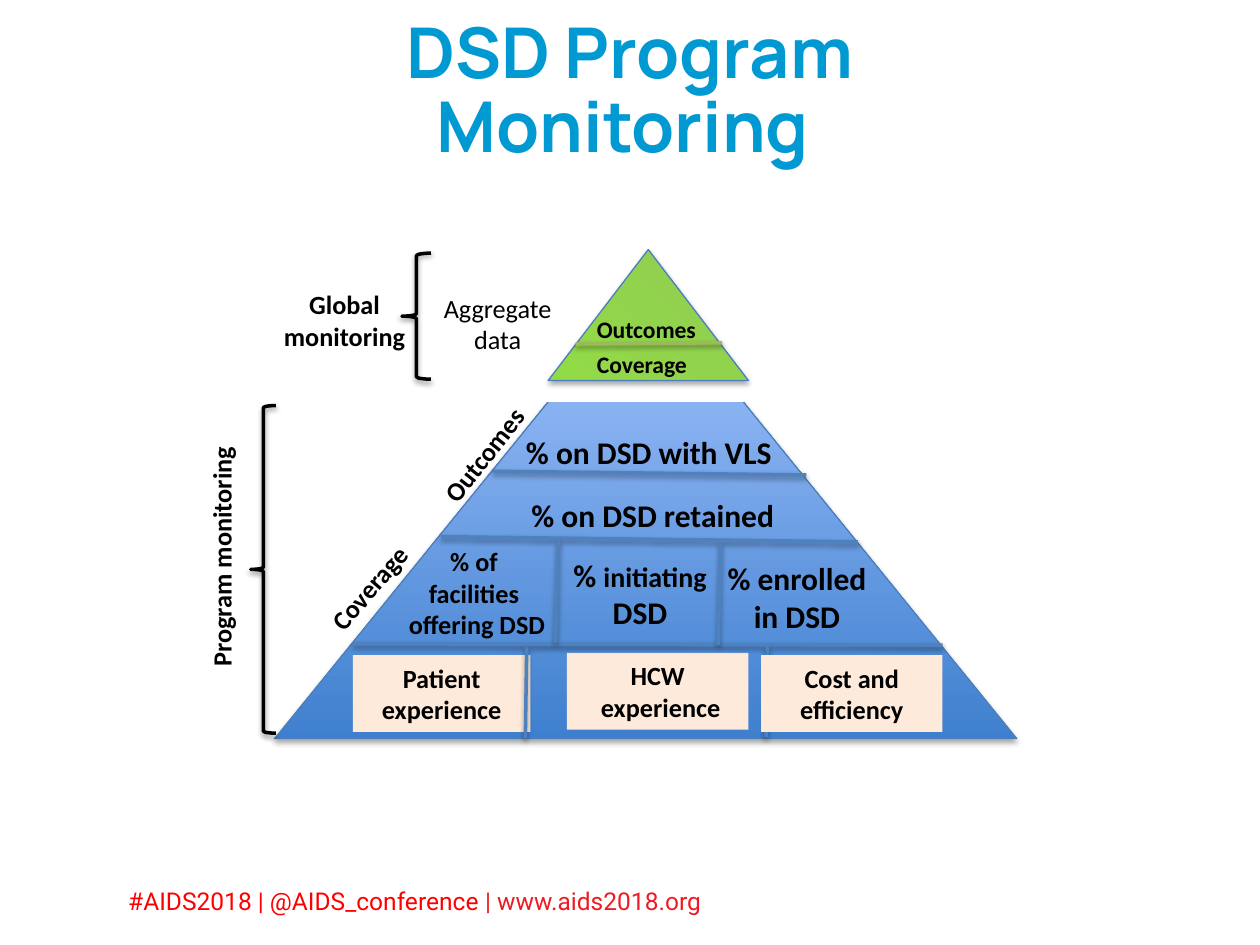
from lxml import etree
from pptx import Presentation
from pptx.dml.color import RGBColor
from pptx.enum.shapes import MSO_CONNECTOR as Connector, MSO_SHAPE as Shape
from pptx.enum.text import MSO_ANCHOR as Anchor, PP_ALIGN as Align
from pptx.oxml import parse_xml
from pptx.oxml.ns import nsdecls, qn
from pptx.util import Pt

COLORS = {
    "title": "0099D2", "text": "000000", "white": "FFFFFF", "card": "FDEADA",
    "edge": "4B7EBC", "divider": "4F81BD", "peak_divider": "9BBB59",
    "hashtag": "FF0000", "site": "ED1C24",
}
BASE_STOPS = [(0, "3F80CE"), (100, "A4C4FF")]
PEAK_STOPS = [(0, "57812A"), (24, "92D050"), (100, "92DA46")]
UPWARD = '<a:lin ang="16200000" scaled="0"/>'
FROM_CORNER = '<a:path path="circle"><a:fillToRect l="100000" b="100000"/></a:path>'


def color(name):
    """Return the named colour."""
    return RGBColor.from_string(COLORS[name])


def place(box, left, top, width, height):
    """Turn a frame relative to a box into slide lengths."""
    return Pt(box[0] + left), Pt(box[1] + top), Pt(width), Pt(height)


def add_shadow(shape, alpha=38, distance=1.6):
    """Give a shape or connector a soft shadow below it."""
    properties = shape._element.spPr
    for old in properties.findall(qn("a:effectLst")):
        properties.remove(old)
    properties.append(parse_xml(
        f'<a:effectLst {nsdecls("a")}><a:outerShdw blurRad="{Pt(3.1)}" dist="{Pt(distance)}" '
        f'dir="5400000" rotWithShape="0"><a:srgbClr val="000000"><a:alpha val="{alpha * 1000}"/>'
        '</a:srgbClr></a:outerShdw></a:effectLst>'))


def set_gradient(shape, stops, direction):
    """Replace the fill of a shape with a gradient."""
    shape.fill.background()
    stop_xml = "".join(f'<a:gs pos="{position * 1000}"><a:srgbClr val="{value}"/></a:gs>'
                       for position, value in stops)
    gradient = parse_xml(f'<a:gradFill {nsdecls("a")} rotWithShape="1"><a:gsLst>{stop_xml}'
                         f'</a:gsLst>{direction}</a:gradFill>')
    properties = shape._element.spPr
    properties.replace(properties.find(qn("a:noFill")), gradient)


def add_triangle(page, box, stops, direction):
    """Draw a shaded triangle that fills the box."""
    triangle = page.shapes.add_shape(Shape.ISOSCELES_TRIANGLE, *map(Pt, box))
    set_gradient(triangle, stops, direction)
    triangle.line.color.rgb = color("edge")
    triangle.line.width = Pt(0.75)
    add_shadow(triangle, alpha=35, distance=1.8)


def add_divider(page, box, ends, name="divider"):
    """Draw a shadowed line between two points of a box."""
    x1, y1, x2, y2 = ends
    divider = page.shapes.add_connector(Connector.STRAIGHT, Pt(box[0] + x1), Pt(box[1] + y1),
                                        Pt(box[0] + x2), Pt(box[1] + y2))
    divider.line.color.rgb = color(name)
    divider.line.width = Pt(2)
    add_shadow(divider)


def add_brace(page, box, frame):
    """Draw a left brace."""
    brace = page.shapes.add_shape(Shape.LEFT_BRACE, *place(box, *frame))
    brace.fill.background()
    brace.line.color.rgb = color("text")
    brace.line.width = Pt(2)
    add_shadow(brace)


def write(shape, lines, size, bold=True, align=Align.CENTER, name="text", font="Calibri",
          spacing=None):
    """Write lines as paragraphs and return the last one."""
    frame = shape.text_frame
    frame.word_wrap = True
    frame.text = "\n".join(lines)
    for para in frame.paragraphs:
        para.alignment = align
        para.line_spacing = spacing
        para.font.name = font
        para.font.size = Pt(size)
        para.font.bold = bold
        para.font.color.rgb = color(name)
    return para


def add_label(page, box, frame, lines, size=15, rotation=0, **style):
    """Add a text box, turned if asked, and return its last paragraph."""
    label = page.shapes.add_textbox(*place(box, *frame))
    label.rotation = rotation
    return write(label, lines, size, **style)


def add_panel(page, box, frame, name):
    """Add a plain filled rectangle."""
    panel = page.shapes.add_shape(Shape.RECTANGLE, *place(box, *frame))
    panel.shadow.inherit = False
    panel.fill.solid()
    panel.fill.fore_color.rgb = color(name)
    panel.line.fill.background()
    return panel


def add_title(page, box):
    """Fill the title placeholder."""
    title = page.shapes.title
    title.left, title.top, title.width, title.height = map(Pt, box)
    title.text_frame.vertical_anchor = Anchor.MIDDLE
    write(title, ["DSD Program Monitoring "], 40, name="title", font="Manrope", spacing=0.88)


def add_footer(page, box):
    """Add the conference line."""
    para = add_label(page, box, (0, 0, *box[2:]), ["#AIDS2018 | @AIDS_conference "], 14,
                     bold=False, align=Align.LEFT, name="hashtag", font="Roboto")
    site = para.add_run()
    site.text = "| www.aids2018.org"
    site.font.color.rgb = color("site")


def add_base(page, box):
    """Build the program pyramid with its cut-off top."""
    add_triangle(page, box, BASE_STOPS, UPWARD)
    add_panel(page, box, (148.3, -6.2, 134.6, 74.9), "white")
    dividers = [
        (124.5, 108.3, 303.8, 110.4), (95, 145.7, 333.3, 148.6), (44.6, 206.9, 381.6, 207.6),
        (162, 147.9, 160.5, 206.2), (254.8, 150, 253.4, 207.6),
        (144, 209, 143.2, 260.9), (281.5, 208.4, 280.8, 260.2),
    ]
    cards = [
        ((44.6, 213.4, 101.5, 43.9), ["Patient experience"]),
        ((167, 212, 103.7, 43.9), ["HCW", " experience"]),
        ((277.9, 213.4, 103.7, 43.9), ["Cost and efficiency"]),
    ]
    for index, (frame, lines) in enumerate(cards):
        if index == 2:
            for ends in dividers:
                add_divider(page, box, ends)
        write(add_panel(page, box, frame, "card"), lines, 15)
    add_label(page, box, (120.2, 72.3, 187.2, 40.3), ["% on DSD with VLS"], 18, spacing=1.5)
    add_label(page, box, (122.4, 108.3, 187.2, 40.3), ["% on DSD retained"], 18, spacing=1.5)
    add_label(page, box, (43.9, 147.2, 143.3, 62), ["% of ", "facilities ", "offering DSD"])
    initiating = add_label(page, box, (160.5, 153, 96.5, 51), ["% "], 18)
    for text, size in (("initiating", 16), (" DSD", 18)):
        span = initiating.add_run()
        span.text = text
        span.font.size = Pt(size)
    add_label(page, box, (246.2, 155, 104.4, 51), ["% enrolled in DSD"], 18)
    add_label(page, box, (17.2, 160, 77, 25.2), ["Coverage"], rotation=310.9, align=Align.LEFT)
    add_label(page, box, (80.6, 86, 77.8, 25.2), ["Outcomes"], rotation=308.1, align=Align.LEFT)


def add_peak(page, box):
    """Build the green top of the pyramid."""
    add_triangle(page, box, PEAK_STOPS, FROM_CORNER)
    add_divider(page, box, (15.8, 54, 99.4, 53.3), "peak_divider")
    add_label(page, box, (20.2, 33.8, 72, 23.8), ["Outcomes"], 13.5)
    add_label(page, box, (19.4, 54, 68.4, 23.8), ["Coverage "], 13.5)


def add_global_side(page, box):
    """Add the labels and brace beside the peak."""
    add_label(page, box, (0, 16.6, 88.6, 43.9), ["Global monitoring"])
    add_brace(page, box, (77.1, 0, 16.6, 72))
    add_label(page, box, (92.2, 18.7, 79.2, 43.9), ["Aggregate data"], bold=False)


def add_program_side(page, box):
    """Add the upright label and brace beside the base."""
    add_brace(page, box, (30.3, 0, 14.4, 187.2))
    add_label(page, box, (-100, 30.3, 226.8, 25.2), ["Program monitoring"], rotation=270,
              align=Align.LEFT)


def main():
    """Build and save the slide."""
    deck = Presentation()
    deck.slide_width, deck.slide_height = Pt(720), Pt(540)
    page = deck.slides.add_slide(deck.slide_layouts[5])
    add_footer(page, (66.2, 502.6, 529.2, 24.5))
    add_title(page, (123.1, 19.4, 473.8, 67.7))
    add_base(page, (157, 161, 424, 261))
    add_peak(page, (313.2, 142.6, 114.5, 74.9))
    add_global_side(page, (152.6, 144.7, 171.4, 72))
    add_program_side(page, (113, 231.8, 44.7, 187.2))
    deck.save("out.pptx")


if __name__ == "__main__":
    main()
